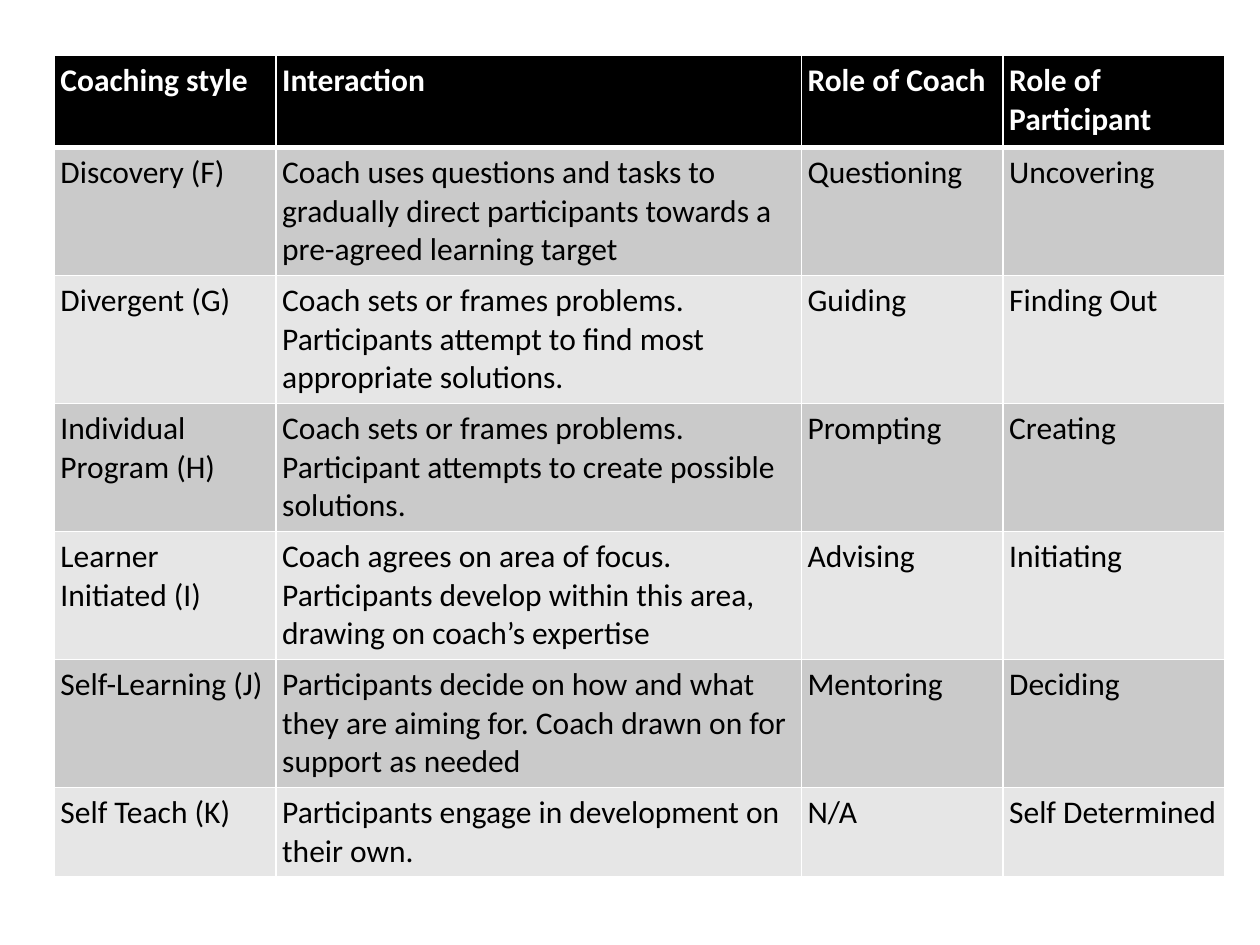
from pptx import Presentation
from pptx.dml.color import RGBColor as RGB
from pptx.oxml import parse_xml
from pptx.oxml.ns import nsdecls
from pptx.util import Inches, Pt

BLACK = RGB(0x00, 0x00, 0x00)
WHITE = RGB(0xFF, 0xFF, 0xFF)
GREY = RGB(0xCA, 0xCA, 0xCA)
PALE = RGB(0xE6, 0xE6, 0xE6)

WIDTHS = [1.76, 4.17, 1.6, 1.76]
HEIGHTS = [0.73] + [1] * 5 + [0.7]
STYLES = [
    ("Coaching style", "Interaction", "Role of Coach", "Role of Participant"),
    ("Discovery (F)",
     "Coach uses questions and tasks to gradually direct participants "
     "towards a pre-agreed learning target",
     "Questioning", "Uncovering"),
    ("Divergent (G)",
     "Coach sets or frames problems. Participants attempt to find most "
     "appropriate solutions.",
     "Guiding", "Finding Out"),
    ("Individual Program (H)",
     "Coach sets or frames problems. Participant attempts to create "
     "possible solutions.",
     "Prompting", "Creating"),
    ("Learner Initiated (I)",
     "Coach agrees on area of focus. Participants develop within this "
     "area, drawing on coach’s expertise",
     "Advising", "Initiating"),
    ("Self-Learning (J)",
     "Participants decide on how and what they are aiming for. Coach "
     "drawn on for support as needed",
     "Mentoring", "Deciding"),
    ("Self Teach (K)", "Participants engage in development on their own.",
     "N/A", "Self Determined"),
]


class Deck:
    font = "Calibri"
    size = Pt(18)
    inset = Inches(0.05)

    def __init__(self, width, height):
        self.prs = Presentation()
        self.prs.slide_width = Inches(width)
        self.prs.slide_height = Inches(height)
        self.slide = self.prs.slides.add_slide(self.prs.slide_layouts[6])

    def edge(self, cell, sides):
        props = cell._tc.get_or_add_tcPr()
        for spot, (side, width) in enumerate(sides.items()):
            line = parse_xml(
                f'<a:ln{side} {nsdecls("a")} w="{Pt(width)}"><a:solidFill>'
                f'<a:srgbClr val="{WHITE}"/></a:solidFill></a:ln{side}>')
            props.insert(spot, line)

    def cell(self, cell, text, fill, color, bold, sides):
        cell.margin_left = cell.margin_right = self.inset
        cell.margin_top = cell.margin_bottom = self.inset
        cell.fill.solid()
        cell.fill.fore_color.rgb = fill
        cell.text_frame.text = text
        font = cell.text_frame.paragraphs[0].runs[0].font
        font.name, font.size, font.bold = self.font, self.size, bold
        font.color.rgb = color
        self.edge(cell, sides)

    def table(self, left, top, widths, heights, data):
        grid = self.slide.shapes.add_table(
            len(heights), len(widths), Inches(left), Inches(top),
            Inches(sum(widths)), Inches(sum(heights))).table
        for col, width in zip(grid.columns, widths):
            col.width = Inches(width)
        for row, height in zip(grid.rows, heights):
            row.height = Inches(height)
        for r, texts in enumerate(data):
            head = r == 0
            fill = BLACK if head else GREY if r % 2 else PALE
            color = WHITE if head else BLACK
            sides = {"L": 1, "R": 1, "T": 3 if r == 1 else 1,
                     "B": 3 if head else 1}
            for c, text in enumerate(texts):
                self.cell(grid.cell(r, c), text, fill, color, head, sides)

    def save(self):
        self.prs.save("out.pptx")


def main():
    deck = Deck(10, 7.5)
    deck.table(0.43, 0.44, WIDTHS, HEIGHTS, STYLES)
    deck.save()


if __name__ == "__main__":
    main()
